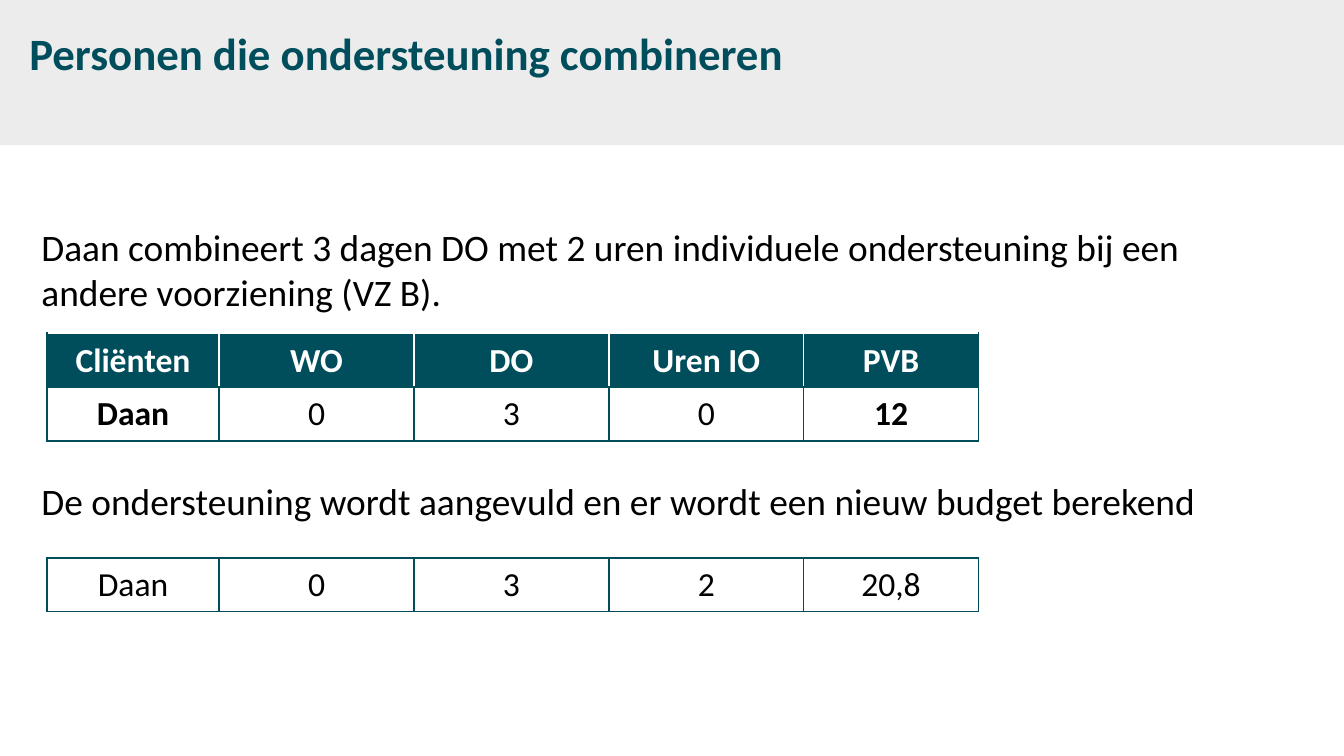
from lxml.etree import SubElement
from pptx import Presentation
from pptx.dml.color import RGBColor
from pptx.enum.shapes import MSO_SHAPE
from pptx.enum.text import PP_ALIGN
from pptx.oxml.ns import qn
from pptx.util import Inches, Pt

TEAL, WHITE, BLACK, GREY = "004D5C", "FFFFFF", "000000", "ECECEC"
COLUMN_WIDTHS = [1.28, 1.45, 1.45, 1.45, 1.3]
ROW_HEIGHT = 0.4
SLIDE_WIDTH = 10


def color(value):
    return RGBColor.from_string(value)


def style_paragraph(paragraph, size, text_color, bold=False):
    font = paragraph.font
    font.name, font.size, font.bold = "Calibri", Pt(size), bold
    font.color.rgb = color(text_color)


def add_text(slide, text, left, top, width, height, size, text_color, bold=False):
    frame = slide.shapes.add_textbox(
        Inches(left), Inches(top), Inches(width), Inches(height)).text_frame
    frame.word_wrap = True
    frame.text = text
    style_paragraph(frame.paragraphs[0], size, text_color, bold)


def add_header(slide, left, top, width, height):
    band = slide.shapes.add_shape(
        MSO_SHAPE.RECTANGLE, Inches(left), Inches(top), Inches(width), Inches(height))
    band.shadow.inherit = False
    band.fill.solid()
    band.fill.fore_color.rgb = color(GREY)
    band.line.fill.background()
    add_text(slide, "Personen die ondersteuning combineren",
             left + 0.12, top + 0.16, width - 0.39, 0.79, 24, TEAL, True)


def set_borders(cell, colors):
    properties = cell._tc.get_or_add_tcPr()
    for side, value in zip("LRTB", colors):
        line = SubElement(properties, qn(f"a:ln{side}"), w=str(Pt(1)))
        fill = SubElement(line, qn("a:solidFill"))
        SubElement(fill, qn("a:srgbClr"), val=value)


def add_budget_table(slide, rows, left, top, has_header=False, bold_columns=()):
    table = slide.shapes.add_table(
        len(rows), len(COLUMN_WIDTHS), Inches(left), Inches(top),
        Inches(sum(COLUMN_WIDTHS)), Inches(ROW_HEIGHT * len(rows))).table
    table.first_row = has_header
    table.horz_banding = False
    for column, width in zip(table.columns, COLUMN_WIDTHS):
        column.width = Inches(width)
    last = len(COLUMN_WIDTHS) - 1
    for row_index, values in enumerate(rows):
        is_header = has_header and row_index == 0
        for column_index, value in enumerate(values):
            cell = table.cell(row_index, column_index)
            cell.text = value
            paragraph = cell.text_frame.paragraphs[0]
            paragraph.alignment = PP_ALIGN.CENTER
            style_paragraph(paragraph, 18, WHITE if is_header else BLACK,
                            is_header or column_index in bold_columns)
            inner = WHITE if is_header else TEAL
            set_borders(cell, [TEAL if column_index == 0 else inner,
                               TEAL if column_index == last else inner,
                               inner, TEAL])
            if is_header:
                cell.fill.solid()
                cell.fill.fore_color.rgb = color(TEAL)
            else:
                cell.fill.background()


def add_example(slide, left, top, width):
    add_text(slide, "Daan combineert 3 dagen DO met 2 uren individuele ondersteuning "
             "bij een andere voorziening (VZ B).", left, top, width, 0.76, 20, BLACK)
    add_budget_table(slide, [["Cliënten", "WO", "DO", "Uren IO", "PVB"],
                             ["Daan", "0", "3", "0", "12"]],
                     left + 0.14, top + 0.86, has_header=True, bold_columns=(0, 4))
    add_text(slide, "De ondersteuning wordt aangevuld en er wordt een nieuw budget berekend",
             left, top + 1.89, width, 0.43, 20, BLACK)
    add_budget_table(slide, [["Daan", "0", "3", "2", "20,8"]], left + 0.14, top + 2.53)


def main():
    presentation = Presentation()
    presentation.slide_width = Inches(SLIDE_WIDTH)
    presentation.slide_height = Inches(SLIDE_WIDTH * 9 / 16)
    slide = presentation.slides.add_slide(presentation.slide_layouts[6])
    add_header(slide, 0, -0.02, SLIDE_WIDTH, 1.1)
    add_example(slide, 0.21, 1.62, 9.3)
    presentation.save("out.pptx")


if __name__ == "__main__":
    main()
